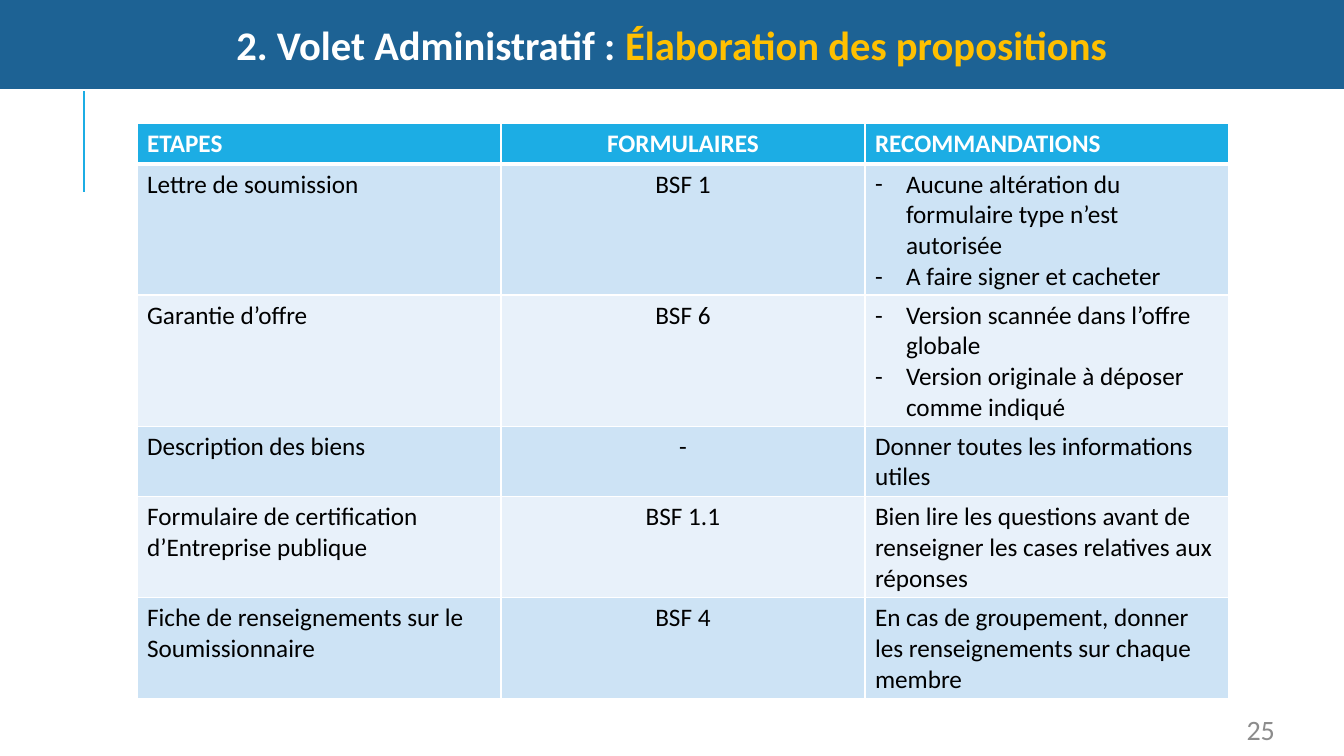
from lxml.etree import SubElement
from pptx import Presentation
from pptx.dml.color import RGBColor
from pptx.enum.shapes import MSO_CONNECTOR
from pptx.enum.text import MSO_ANCHOR, MSO_AUTO_SIZE, PP_ALIGN
from pptx.oxml.ns import qn
from pptx.util import Pt

COLORS = {
    "white": "FFFFFF",
    "black": "000000",
    "banner": "1D6294",
    "gold": "FFC000",
    "accent": "1CADE4",
    "band_dark": "CDE3F5",
    "band_light": "E8F1FA",
    "grey": "8C8C8C",
}
HEADERS = ["ETAPES", "FORMULAIRES", "RECOMMANDATIONS"]
STEPS = [
    ("Lettre de soumission", "BSF 1",
     ["Aucune altération du formulaire type n’est autorisée",
      "A faire signer et cacheter"]),
    ("Garantie d’offre", "BSF 6",
     ["Version scannée dans l’offre globale",
      "Version originale à déposer comme indiqué"]),
    ("Description des biens", "-", "Donner toutes les informations utiles"),
    ("Formulaire de certification d’Entreprise publique", "BSF 1.1",
     "Bien lire les questions avant de renseigner les cases relatives aux réponses"),
    ("Fiche de renseignements sur le Soumissionnaire", "BSF 4",
     "En cas de groupement, donner les renseignements sur chaque membre"),
]


def px(n):
    return round(n * 914400 / 100.8)


def rgb(name):
    return RGBColor.from_string(COLORS[name])


class SlideBuilder:
    font = "Calibri"

    def __init__(self, s):
        self.s = s

    def run(self, p, text, size, color, bold=False):
        r = p.add_run()
        r.text = text
        r.font.name = self.font
        r.font.size = Pt(size)
        r.font.bold = bold
        r.font.color.rgb = rgb(color)

    def title(self, x, y, w, h, parts):
        sp = self.s.shapes.title
        sp.left, sp.top, sp.width, sp.height = px(x), px(y), px(w), px(h)
        sp.fill.solid()
        sp.fill.fore_color.rgb = rgb("banner")
        tf = sp.text_frame
        tf.auto_size = MSO_AUTO_SIZE.NONE
        tf.word_wrap = True
        tf.vertical_anchor = MSO_ANCHOR.MIDDLE
        tf.margin_left = tf.margin_right = px(11)
        tf.margin_top = tf.margin_bottom = px(6)
        p = tf.paragraphs[0]
        p.alignment = PP_ALIGN.CENTER
        for text, color in parts:
            self.run(p, text, 29, color, True)

    def line(self, x1, y1, x2, y2):
        c = self.s.shapes.add_connector(
            MSO_CONNECTOR.STRAIGHT, px(x1), px(y1), px(x2), px(y2))
        c.line.color.rgb = rgb("accent")
        c.line.width = Pt(1.5)
        SubElement(c._element.spPr, qn("a:effectLst"))

    def page_number(self, x, y, w, h, text):
        tf = self.s.shapes.add_textbox(px(x), px(y), px(w), px(h)).text_frame
        tf.word_wrap = True
        tf.auto_size = MSO_AUTO_SIZE.SHAPE_TO_FIT_TEXT
        tf.margin_left = tf.margin_right = tf.margin_top = tf.margin_bottom = 0
        p = tf.paragraphs[0]
        p.alignment = PP_ALIGN.RIGHT
        self.run(p, text, 20, "grey")

    def dash(self, p):
        pPr = p._p.get_or_add_pPr()
        pPr.set("marL", str(px(31)))
        pPr.set("indent", str(-px(31)))
        SubElement(pPr, qn("a:buFont"), typeface=self.font)
        SubElement(pPr, qn("a:buChar"), char="-")

    def borders(self, cell, top, bottom):
        tcPr = cell._tc.get_or_add_tcPr()
        for side, width in zip("LRTB", (1, 1, top, bottom)):
            ln = SubElement(tcPr, qn(f"a:ln{side}"), w=str(Pt(width)))
            fill = SubElement(ln, qn("a:solidFill"))
            SubElement(fill, qn("a:srgbClr"), val=COLORS["white"])

    def cell(self, cell, content, row, col):
        header = row == 0
        self.borders(cell, 3 if row == 1 else 1, 3 if header else 1)
        band = "band_dark" if row % 2 else "band_light"
        cell.fill.solid()
        cell.fill.fore_color.rgb = rgb("accent" if header else band)
        tf = cell.text_frame
        bulleted = isinstance(content, list)
        for i, text in enumerate(content if bulleted else [content]):
            p = tf.add_paragraph() if i else tf.paragraphs[0]
            p.alignment = PP_ALIGN.CENTER if col == 1 else PP_ALIGN.LEFT
            if bulleted:
                self.dash(p)
            self.run(p, text, 18, "white" if header else "black", header)

    def table(self, x, y, col_width, row_height, rows):
        n_rows, n_cols = len(rows), len(rows[0])
        table = self.s.shapes.add_table(
            n_rows, n_cols, px(x), px(y),
            px(col_width * n_cols), px(row_height * n_rows)).table
        table.horz_banding = False
        for column in table.columns:
            column.width = px(col_width)
        for i, row in enumerate(rows):
            table.rows[i].height = px(row_height)
            for j, content in enumerate(row):
                self.cell(table.cell(i, j), content, i, j)


def main():
    prs = Presentation()
    prs.slide_width, prs.slide_height = px(1344), px(756)
    b = SlideBuilder(prs.slides.add_slide(prs.slide_layouts[5]))
    b.line(84, 192, 84, 91)
    b.title(0, 0, 1344, 89, [("2. Volet Administratif : ", "white"),
                             ("Élaboration des propositions", "gold")])
    b.page_number(1230, 713, 45, 34, "25")
    b.table(137, 123, 364, 41, [HEADERS, *STEPS])
    prs.save("out.pptx")


if __name__ == "__main__":
    main()
